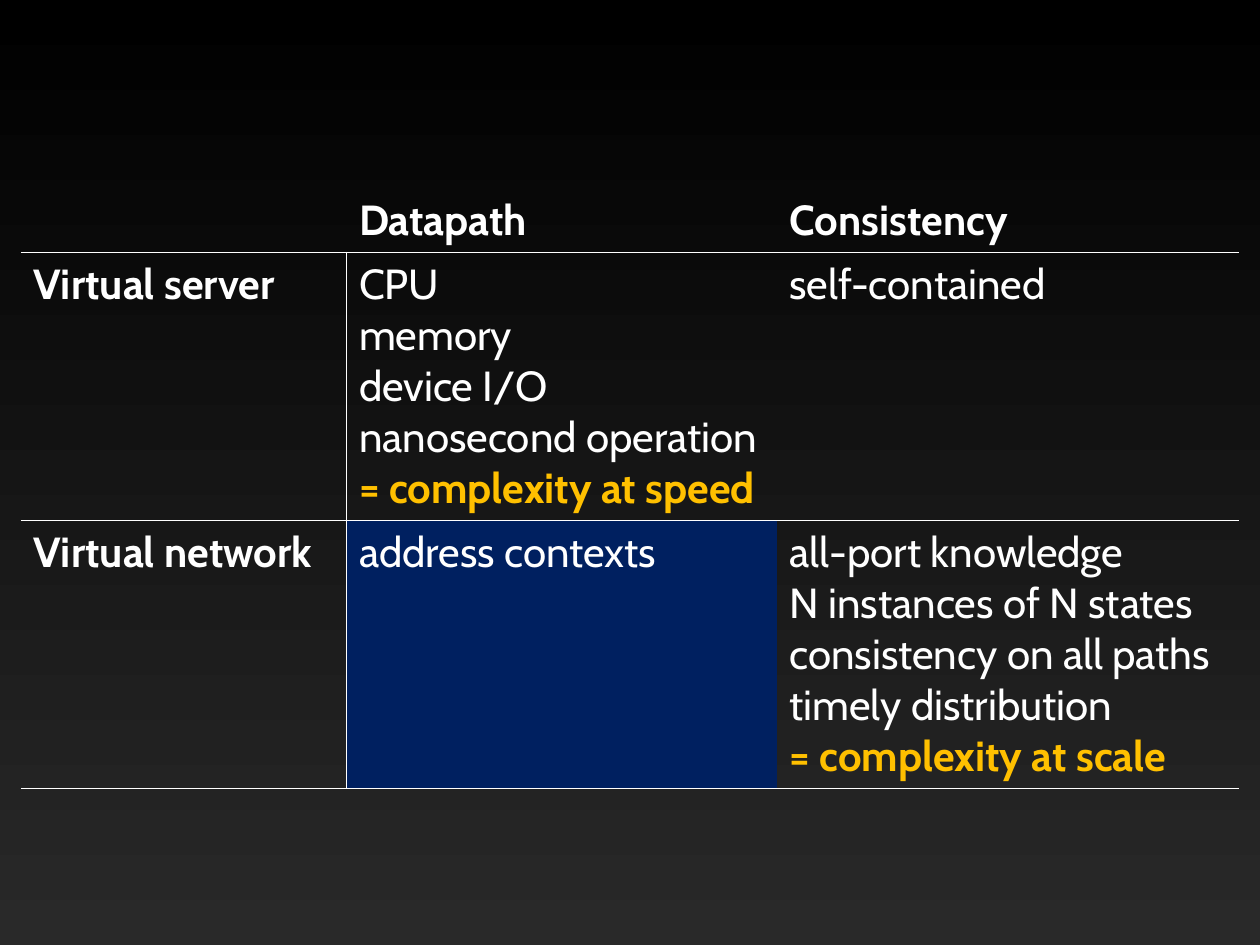
import pptx
import pptx.dml.color
import pptx.oxml
import pptx.oxml.ns
import pptx.util

Pt = pptx.util.Pt
RGBColor = pptx.dml.color.RGBColor
BLACK = RGBColor(0x00, 0x00, 0x00)
CHARCOAL = RGBColor(0x29, 0x29, 0x29)
WHITE = RGBColor(0xFF, 0xFF, 0xFF)
AMBER = RGBColor(0xFF, 0xC0, 0x00)
NAVY = RGBColor(0x00, 0x20, 0x60)

COLUMN_WIDTHS = [186, 246, 264]
ROW_HEIGHTS = [36, 153, 153]
ROWS = [
    [[], ["Datapath"], ["Consistency"]],
    [["Virtual server"],
     ["CPU", "memory", "device I/O", "nanosecond operation", "= complexity at speed"],
     ["self-contained"]],
    [["Virtual network"],
     ["address contexts"],
     ["all-port knowledge", "N instances of N states", "consistency on all paths",
      "timely distribution", "= complexity at scale"]],
]


def write_text(para, text, bold=False, color=WHITE):
    span = para.add_run()
    span.text = text
    span.font.name = "Cabin"
    span.font.size = Pt(24)
    span.font.bold = bold
    span.font.color.rgb = color


def set_borders(cell, visible):
    """Draw white 1 pt borders on the sides in visible; clear the others."""
    properties = cell._tc.get_or_add_tcPr()
    for side in "LRTB":
        paint = (f'<a:solidFill><a:srgbClr val="{WHITE}"/></a:solidFill>'
                 if side in visible else "<a:noFill/>")
        properties.append(pptx.oxml.parse_xml(
            f'<a:ln{side} {pptx.oxml.ns.nsdecls("a")} w="{Pt(1)}">{paint}</a:ln{side}>'))


deck = pptx.Presentation()
deck.slide_width = Pt(720)
deck.slide_height = Pt(540)
page = deck.slides.add_slide(deck.slide_layouts[6])

backdrop = page.background.fill
backdrop.gradient()
backdrop.gradient_angle = 270
for stop, color, position in zip(backdrop.gradient_stops, (BLACK, CHARCOAL), (0, 1)):
    stop.color.rgb = color
    stop.position = position

table = page.shapes.add_table(
    len(ROWS), len(COLUMN_WIDTHS), Pt(12), Pt(108),
    Pt(sum(COLUMN_WIDTHS)), Pt(sum(ROW_HEIGHTS))).table
table.first_row = False
table.horz_banding = False
for column, width in zip(table.columns, COLUMN_WIDTHS):
    column.width = Pt(width)
for row, height in zip(table.rows, ROW_HEIGHTS):
    row.height = Pt(height)

for row_index, row in enumerate(ROWS):
    for column_index, lines in enumerate(row):
        cell = table.cell(row_index, column_index)
        is_heading = row_index == 0 or column_index == 0
        sides = "B"
        if row_index > 0:
            sides += "T" + {0: "R", 1: "L"}.get(column_index, "")
        set_borders(cell, sides)
        if (row_index, column_index) == (2, 1):
            cell.fill.solid()
            cell.fill.fore_color.rgb = NAVY
        else:
            cell.fill.background()
        for line_index, line in enumerate(lines):
            frame = cell.text_frame
            para = frame.paragraphs[0] if line_index == 0 else frame.add_paragraph()
            is_conclusion = line.startswith("=")
            write_text(para, line, bold=is_heading or is_conclusion,
                       color=AMBER if is_conclusion else WHITE)

deck.save("out.pptx")
